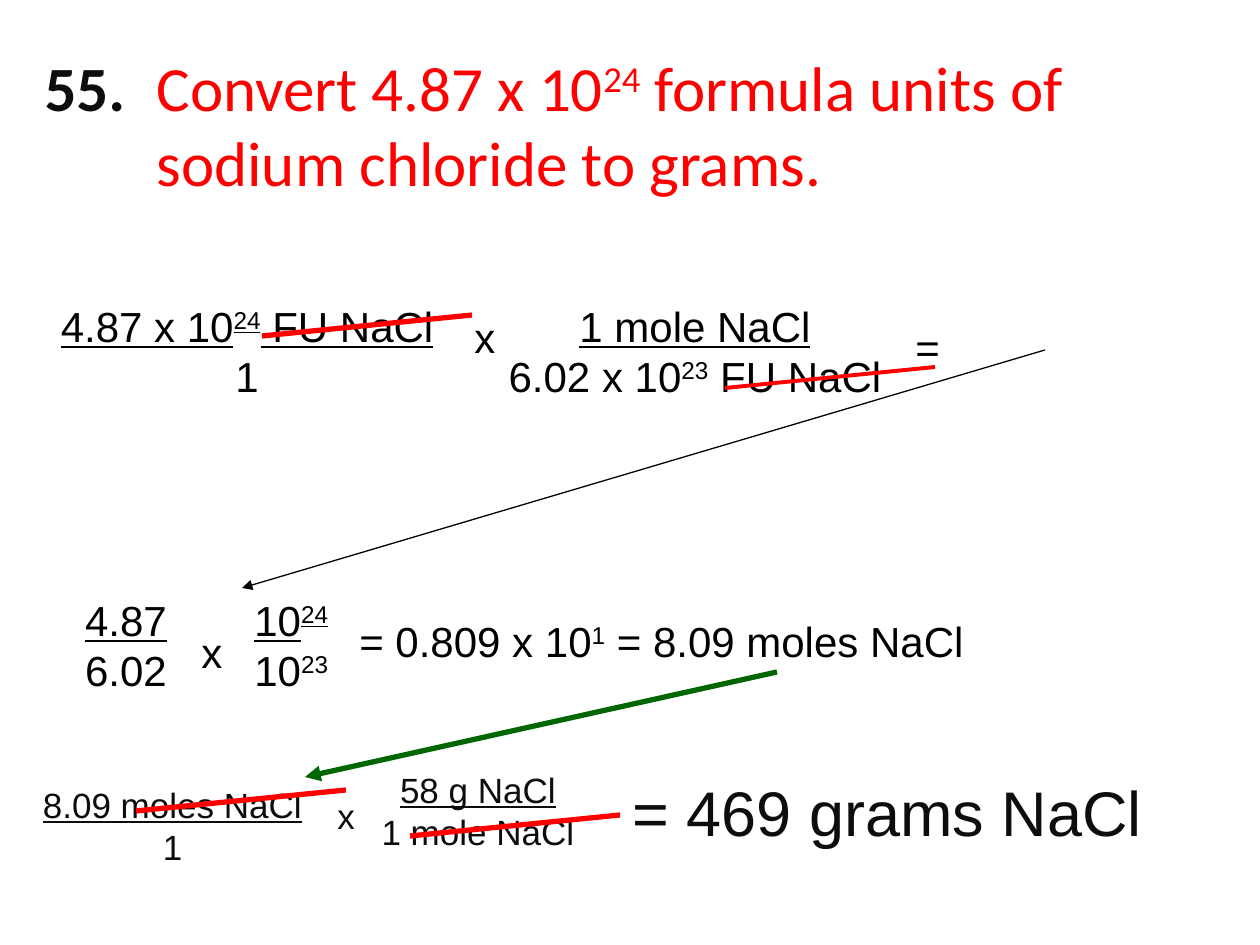
from lxml import etree
from pptx import Presentation
from pptx.dml.color import RGBColor
from pptx.enum.shapes import MSO_CONNECTOR
from pptx.enum.text import MSO_ANCHOR, MSO_AUTO_SIZE, PP_ALIGN
from pptx.oxml.ns import qn
from pptx.util import Emu, Pt

STRAIGHT = MSO_CONNECTOR.STRAIGHT
TOP = MSO_ANCHOR.TOP
FIT_SHAPE = MSO_AUTO_SIZE.SHAPE_TO_FIT_TEXT
FIXED = MSO_AUTO_SIZE.NONE
LEFT, CENTER = PP_ALIGN.LEFT, PP_ALIGN.CENTER

BLACK, INK, RED, GREEN = "000000", "0D0D0D", "FF0000", "006600"


def px(length):
    return Emu(round(length * 914400 / 126))


def color(value):
    return RGBColor.from_string(value)


class WorkedProblem:
    """Draws a unit conversion on one slide; text between carets is superscript."""

    def __init__(self, deck):
        self.slide = deck.slides.add_slide(deck.slide_layouts[5])
        self.title_font = "Calibri"
        self.math_font = "Arial"

    def spans(self, para, text, font, size, ink, bold=False, underline=False):
        for index, part in enumerate(text.split("^")):
            if not part:
                continue
            span = para.add_run()
            span.text = part
            span.font.name = font
            span.font.size = Pt(size)
            span.font.bold = bold
            span.font.underline = underline
            span.font.color.rgb = color(ink)
            if index % 2:
                span.font._element.set("baseline", "30000")

    def title(self, bounds, number, lines, indent):
        box = self.slide.shapes.title
        box.left, box.top, box.width, box.height = map(px, bounds)
        frame = box.text_frame
        frame.auto_size = FIXED
        frame.vertical_anchor = TOP
        para = frame.paragraphs[0]
        para.alignment = LEFT
        properties = para._p.get_or_add_pPr()
        properties.set("marL", str(px(indent)))
        properties.set("indent", str(-px(indent)))
        self.spans(para, number, self.title_font, 36, INK, bold=True)
        first, second = lines
        self.spans(para, "\t" + first, self.title_font, 36, RED)
        para.add_line_break()
        self.spans(para, second, self.title_font, 36, RED)

    def math_box(self, bounds, align, wrap):
        box = self.slide.shapes.add_textbox(*map(px, bounds))
        frame = box.text_frame
        frame.word_wrap = wrap
        frame.auto_size = FIT_SHAPE
        para = frame.paragraphs[0]
        para.alignment = align
        before = etree.SubElement(para._p.get_or_add_pPr(), qn("a:spcBef"))
        etree.SubElement(before, qn("a:spcPct")).set("val", "50000")
        return para

    def term(self, bounds, text, size=24, ink=BLACK):
        para = self.math_box(bounds, LEFT, True)
        self.spans(para, text, self.math_font, size, ink)

    def fraction(self, bounds, top, bottom, size=24, ink=BLACK, align=CENTER, wrap=True):
        para = self.math_box(bounds, align, wrap)
        self.spans(para, top, self.math_font, size, ink, underline=True)
        para.add_line_break()
        self.spans(para, bottom, self.math_font, size, ink)

    def line(self, start, end, ink, width, arrow=False):
        line = self.slide.shapes.add_connector(STRAIGHT, *map(px, start + end))
        line.line.color.rgb = color(ink)
        line.line.width = Pt(width)
        if arrow:
            etree.SubElement(line.line._get_or_add_ln(), qn("a:tailEnd")).set("type", "triangle")
        etree.SubElement(line._element.spPr, qn("a:effectLst"))

    def strike(self, left, bottom, width=3):
        self.line((left, bottom), (left + 210, bottom - 21), RED, width)


def main():
    deck = Presentation()
    deck.slide_width, deck.slide_height = px(1260), px(945)
    problem = WorkedProblem(deck)

    problem.title(
        (32, 42, 1176, 165),
        "55.",
        ("Convert 4.87 x 10^24^ formula units of", "sodium chloride to grams."),
        indent=112,
    )

    problem.line((1045, 350), (242, 588), BLACK, 0.75, arrow=True)
    problem.fraction((63, 588, 126, 113), "4.87", "6.02")
    problem.term((189, 620, 53, 63), "x")
    problem.fraction((242, 588, 103, 113), "10^24^", "10^23^", align=LEFT, wrap=False)
    problem.term((347, 609, 693, 63), "= 0.809 x 10^1^ = 8.09 moles NaCl")
    problem.term((620, 767, 599, 89), "= 469 grams NaCl", 36, INK)
    problem.line((777, 672), (305, 777), GREEN, 3, arrow=True)

    problem.fraction((42, 294, 410, 113), "4.87 x 10^24^ FU NaCl", "1")
    problem.term((462, 305, 105, 63), "x")
    problem.fraction((494, 294, 402, 113), "1 mole NaCl", "6.02 x 10^23^ FU NaCl", wrap=False)
    problem.term((903, 315, 73, 63), "=")
    problem.strike(262, 336)
    problem.strike(725, 388, 2.25)

    problem.fraction((10, 777, 325, 97), "8.09 moles NaCl", "1", 20, INK)
    problem.term((325, 788, 73, 55), "x", 20, INK)
    problem.fraction((368, 762, 220, 97), "58 g NaCl", "1 mole NaCl", 20, INK, wrap=False)
    problem.strike(136, 811)
    problem.strike(410, 836)

    deck.save("out.pptx")


if __name__ == "__main__":
    main()
